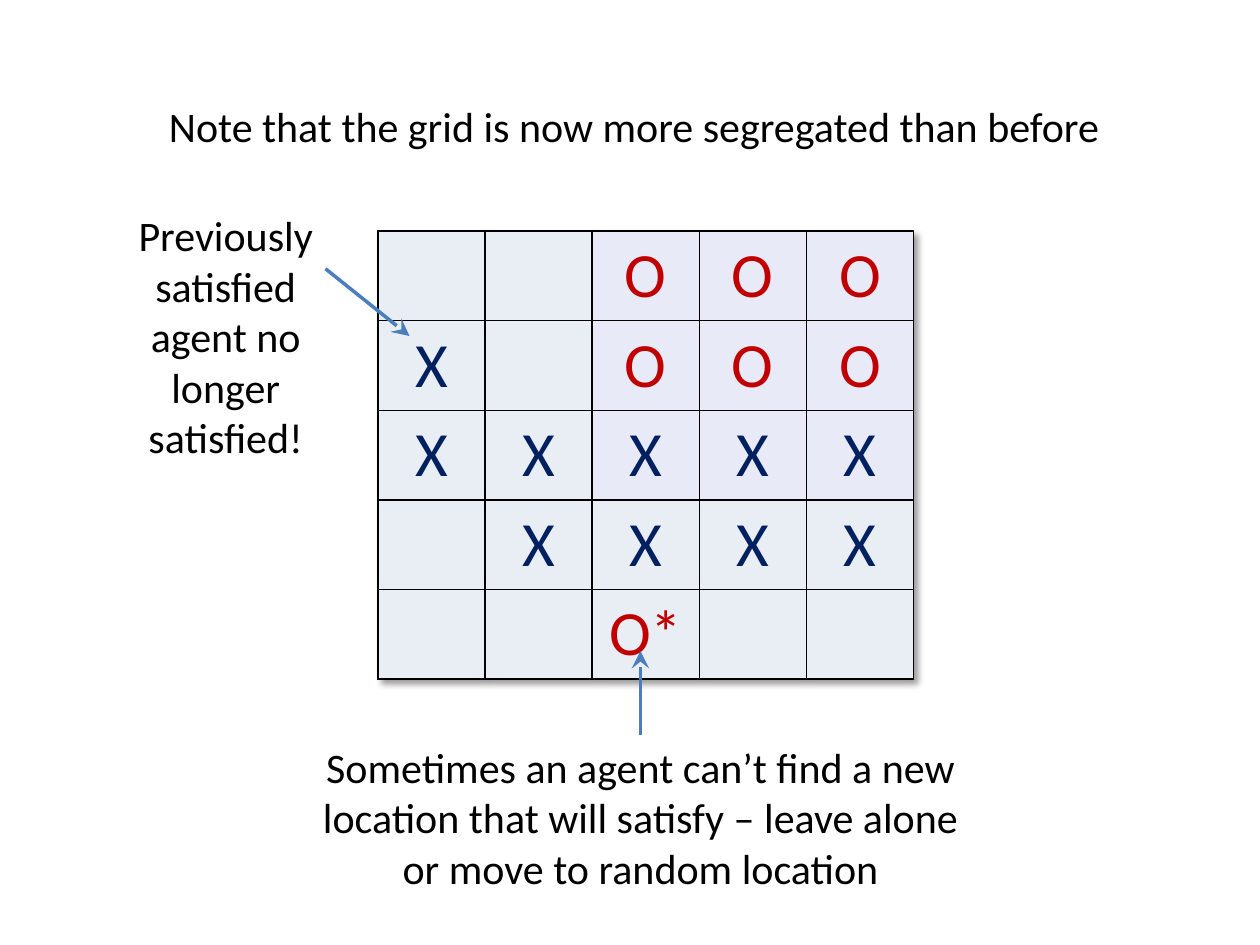
from dataclasses import dataclass

from lxml import etree
from pptx import Presentation
from pptx import util as u
from pptx.dml.color import RGBColor
from pptx.enum import shapes, text
from pptx.oxml import ns

COLUMNS, ROWS = 120, 90  # layout grid laid over the slide
STEP = u.Inches(10) / COLUMNS


@dataclass(frozen=True)
class Theme:
    font: str = "Calibri"
    note_size: int = 24
    mark_size: int = 36
    ink: str = "000000"
    arrow: str = "4B7EBC"
    cell: str = "E9EDF4"
    cell_highlight: str = "E9EAF7"
    x_agent: str = "002060"
    o_agent: str = "C00000"


THEME = Theme()

AGENTS = [
    ["", "", "O", "O", "O"],
    ["X", "", "O", "O", "O"],
    ["X", "X", "X", "X", "X"],
    ["", "X", "X", "X", "X"],
    ["", "", "O*", "", ""],
]


def steps(*counts):
    return [u.Emu(round(count * STEP)) for count in counts]


def add_xml(parent, tag, **attributes):
    return etree.SubElement(parent, ns.qn(tag), attributes)


def write(frame, words, size, color):
    para = frame.paragraphs[0]
    para.text = words
    para.alignment = text.PP_ALIGN.CENTER
    para.font.name = THEME.font
    para.font.size = u.Pt(size)
    para.font.color.rgb = RGBColor.from_string(color)


def write_note(shape, words):
    frame = shape.text_frame
    frame.word_wrap = True
    frame.auto_size = text.MSO_AUTO_SIZE.SHAPE_TO_FIT_TEXT
    frame.vertical_anchor = text.MSO_ANCHOR.TOP
    write(frame, words, THEME.note_size, THEME.ink)


def place_title(page, box, words):
    title = page.shapes.title
    title.left, title.top, title.width, title.height = steps(*box)
    write_note(title, words)


def outline_cell(cell):
    properties = cell._tc.get_or_add_tcPr()
    for index, side in enumerate(("lnL", "lnR", "lnT", "lnB")):
        border = etree.Element(ns.qn(f"a:{side}"), w=str(u.Pt(1)))
        fill = add_xml(border, "a:solidFill")
        add_xml(fill, "a:srgbClr", val=THEME.ink)
        properties.insert(index, border)


def add_table_shadow(table):
    effects = etree.Element(ns.qn("a:effectLst"))
    shadow = add_xml(effects, "a:outerShdw", blurRad="50800", dist="38100",
                     dir="2700000", algn="tl", rotWithShape="0")
    color = add_xml(shadow, "a:prstClr", val="black")
    add_xml(color, "a:alpha", val="40000")
    table._tbl.tblPr.insert(0, effects)


def place_agent_grid(page, box, agents):
    count = len(agents)
    table = page.shapes.add_table(count, count, *steps(*box)).table
    table.first_row = table.horz_banding = False
    add_table_shadow(table)
    for row, marks in enumerate(agents):
        for column, mark in enumerate(marks):
            cell = table.cell(row, column)
            highlighted = row <= 2 and column >= 2
            fill = THEME.cell_highlight if highlighted else THEME.cell
            cell.fill.solid()
            cell.fill.fore_color.rgb = RGBColor.from_string(fill)
            outline_cell(cell)
            if mark:
                color = THEME.x_agent if mark == "X" else THEME.o_agent
                write(cell.text_frame, mark, THEME.mark_size, color)


def place_callout(page, box, words, start, tip, joined_side=None):
    """Place a note and its arrow; start and tip are offsets from the box."""
    group = page.shapes.add_group_shape()
    note = group.shapes.add_textbox(*steps(*box))
    write_note(note, words)

    # Arrow from the note to the agent
    left, top = box[:2]
    ends = steps(left + start[0], top + start[1], left + tip[0], top + tip[1])
    arrow = group.shapes.add_connector(shapes.MSO_CONNECTOR.STRAIGHT, *ends)
    if joined_side is not None:
        arrow.begin_connect(note, joined_side)
    arrow.line.color.rgb = RGBColor.from_string(THEME.arrow)
    arrow.line.width = u.Pt(2)
    add_xml(arrow.line._get_or_add_ln(), "a:tailEnd",
            type="stealth", w="lg", len="lg")
    add_xml(arrow._element.spPr, "a:effectLst")


def main():
    deck = Presentation()
    deck.slide_width, deck.slide_height = steps(COLUMNS, ROWS)
    page = deck.slides.add_slide(deck.slide_layouts.get_by_name("Title Only"))

    place_title(page, (11.4, 9, 98, 6),
                "Note that the grid is now more segregated than before")
    place_agent_grid(page, (36, 22, 51, 42.7), AGENTS)
    place_callout(page, (11.2, 19.4, 20.6, 25.4),
                  "Previously satisfied agent no longer satisfied!",
                  start=(19.8, 6.2), tip=(27.8, 12.6))
    place_callout(page, (28, 70, 66, 15.7),
                  "Sometimes an agent can’t find a new location that will "
                  "satisfy – leave alone or move to random location",
                  start=(33, 0), tip=(33, -8), joined_side=0)
    deck.save("out.pptx")


if __name__ == "__main__":
    main()
